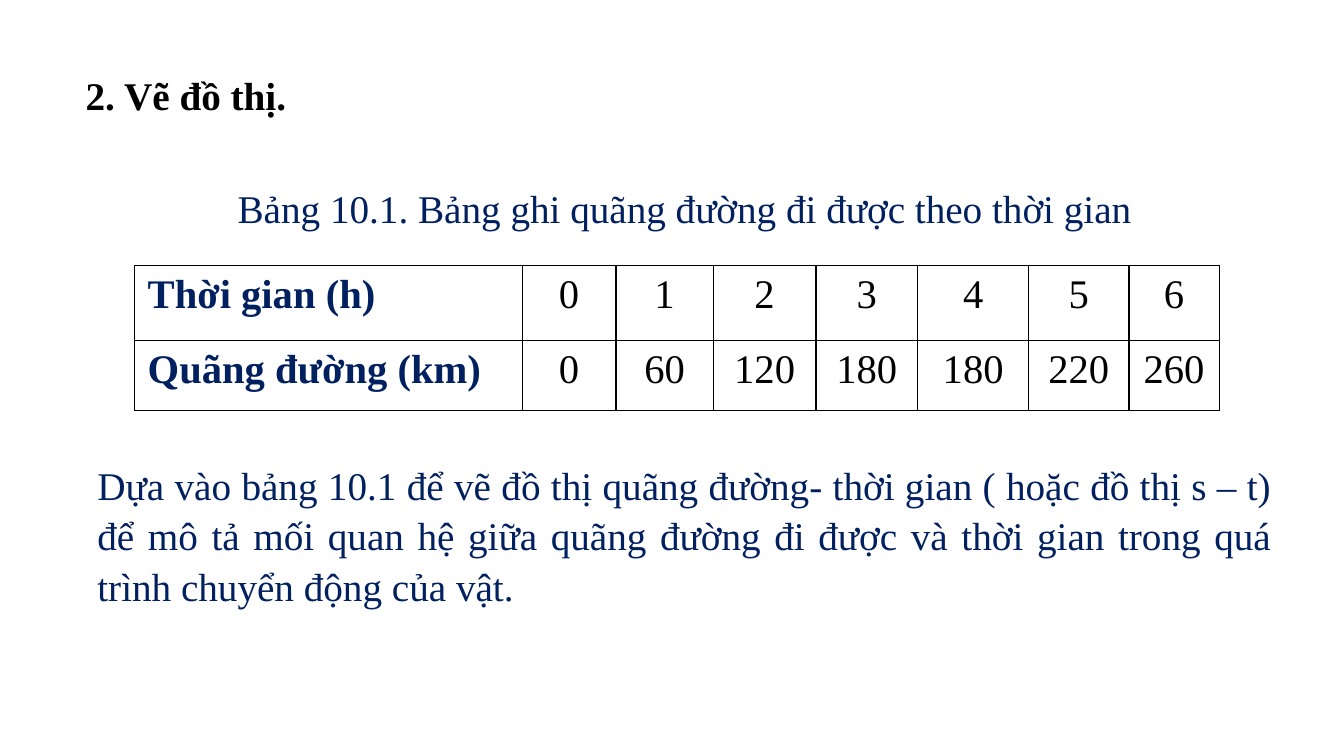
from lxml import etree
from pptx import Presentation
from pptx.dml.color import RGBColor
from pptx.enum import text as t
from pptx.oxml import ns
from pptx.util import Pt

FONT, NAVY, BLACK, WHITE = "Times New Roman", "002060", "000000", "FFFFFF"
HEAD = "2. Vẽ đồ thị."
NOTES = [  # wording, top, height, alignment
    ("Bảng 10.1. Bảng ghi quãng đường đi được theo thời gian",
     126, 43, t.PP_ALIGN.CENTER),
    ("Dựa vào bảng 10.1 để vẽ đồ thị quãng đường- thời gian ( hoặc đồ thị s – t) "
     "để mô tả mối quan hệ giữa quãng đường đi được và thời gian trong quá trình "
     "chuyển động của vật.", 323.5, 115, t.PP_ALIGN.JUSTIFY),
]
ROWS = [
    ("Thời gian (h)", 0, 1, 2, 3, 4, 5, 6),
    ("Quãng đường (km)", 0, 60, 120, 180, 180, 220, 260),
]
WIDTHS = [277, 67, 69.5, 73.5, 72.5, 79.5, 71.5, 64.5]
HEIGHTS = [53.5, 50.5]


def color(code):
    return RGBColor.from_string(code)


def write(frame, words, size, code, bold=False, align=t.PP_ALIGN.LEFT, space=1.0):
    frame.text = words
    frame.word_wrap = True
    para = frame.paragraphs[0]
    para.alignment, para.line_spacing = align, space
    para.space_before = Pt(0)
    font = para.runs[0].font
    font.name, font.size, font.bold = FONT, Pt(size), bold
    font.color.rgb = color(code)


def outline(cell):
    """Draw a thin black border on every side of a table cell."""
    props = cell._tc.get_or_add_tcPr()
    for spot, side in enumerate(("lnL", "lnR", "lnT", "lnB")):
        line = etree.Element(ns.qn("a:" + side), w=str(Pt(1)))
        fill = etree.SubElement(line, ns.qn("a:solidFill"))
        etree.SubElement(fill, ns.qn("a:srgbClr"), val=BLACK)
        props.insert(spot, line)


def main():
    deck = Presentation()
    deck.slide_width, deck.slide_height = Pt(960), Pt(540)
    slide = deck.slides.add_slide(deck.slide_layouts[5])

    title = slide.shapes.title
    title.left, title.top, title.width, title.height = map(Pt, (54, 51, 828, 38))
    write(title.text_frame, HEAD, 28, BLACK, bold=True, space=0.9)
    title.text_frame.vertical_anchor = t.MSO_ANCHOR.TOP
    title.text_frame.auto_size = t.MSO_AUTO_SIZE.NONE

    for words, top, height, align in NOTES:
        box = slide.shapes.add_textbox(Pt(62.5), Pt(top), Pt(853), Pt(height))
        write(box.text_frame, words, 28, NAVY, align=align, space=1.07)

    table = slide.shapes.add_table(
        len(ROWS), len(WIDTHS), Pt(96), Pt(189.5),
        Pt(sum(WIDTHS)), Pt(sum(HEIGHTS))).table
    for col, width in zip(table.columns, WIDTHS):
        col.width = Pt(width)
    for r, (row, height) in enumerate(zip(ROWS, HEIGHTS)):
        table.rows[r].height = Pt(height)
        for c, value in enumerate(row):
            cell = table.cell(r, c)
            label = c == 0
            write(cell.text_frame, str(value), 29, NAVY if label else BLACK, label,
                  t.PP_ALIGN.LEFT if label else t.PP_ALIGN.CENTER)
            cell.margin_left = cell.margin_right = Pt(9.5)
            cell.margin_top = cell.margin_bottom = Pt(5)
            cell.fill.solid()
            cell.fill.fore_color.rgb = color(WHITE)
            outline(cell)

    deck.save("out.pptx")


if __name__ == "__main__":
    main()
